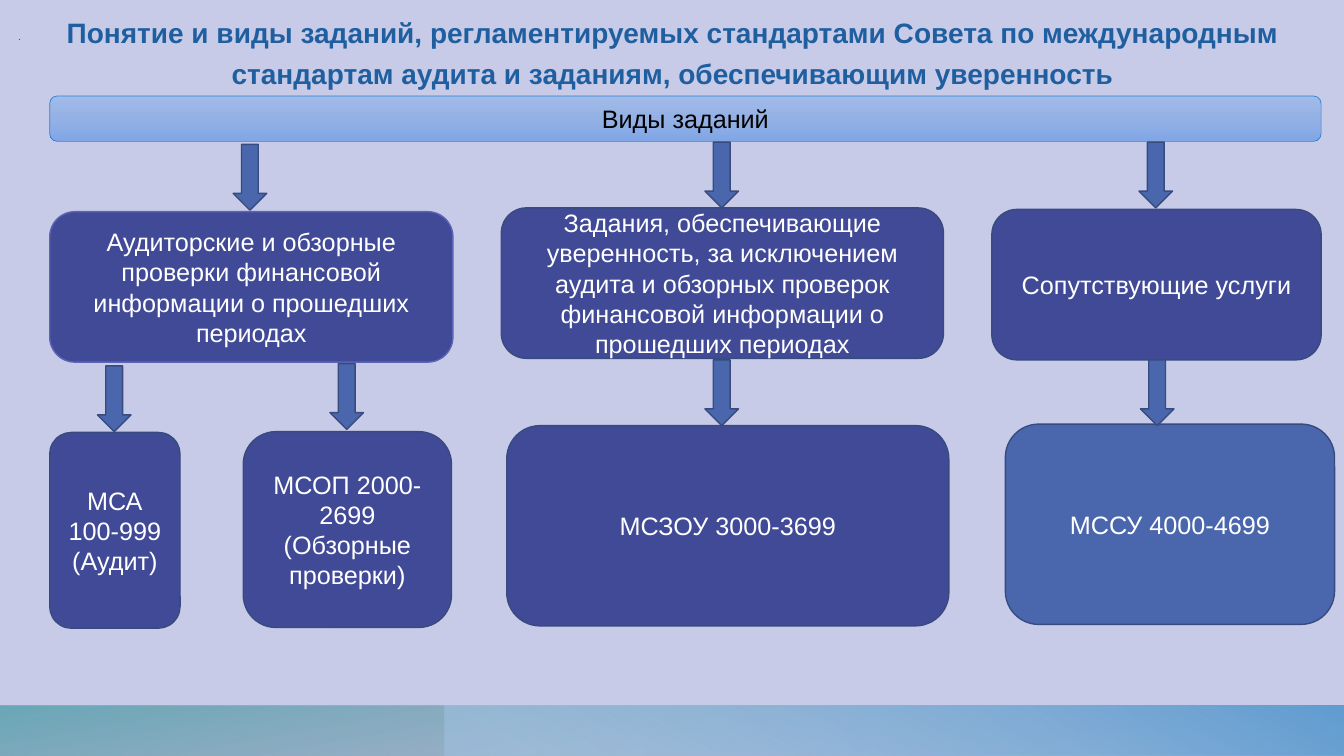
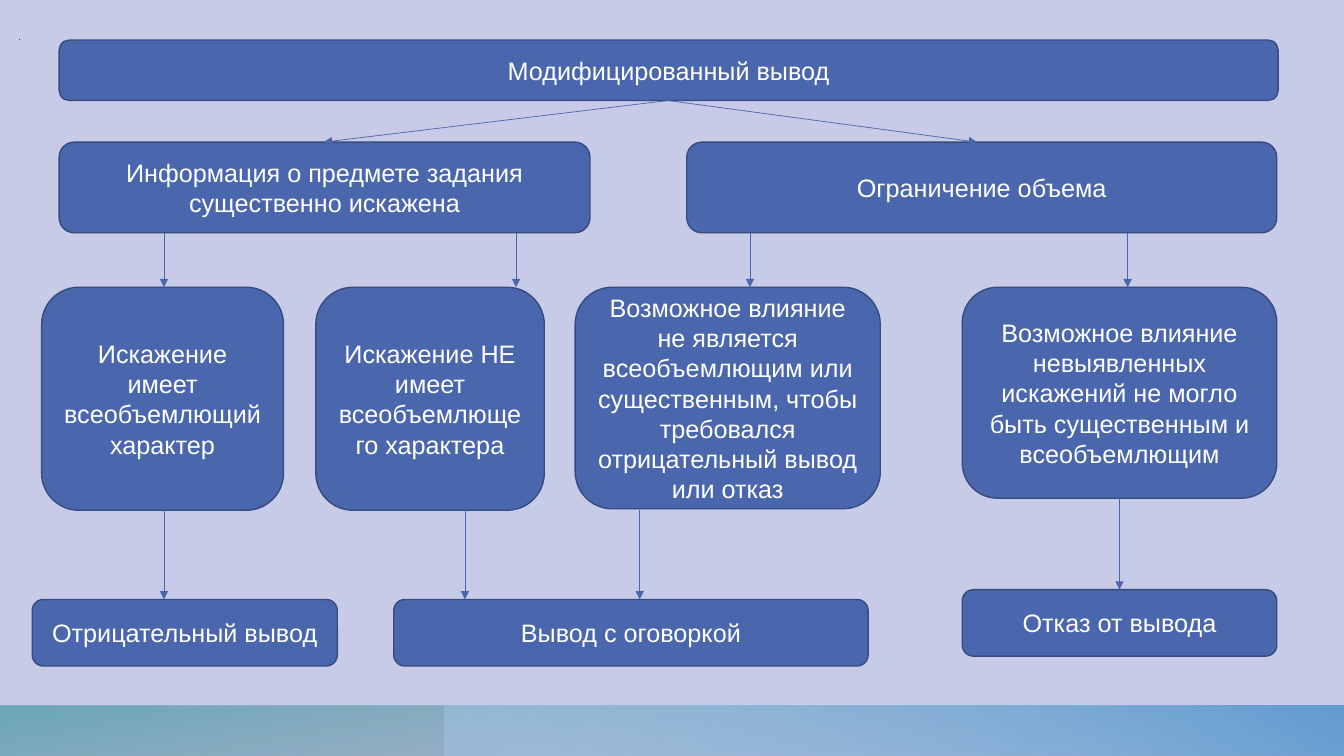
from lxml.etree import SubElement
from pptx import Presentation
from pptx.dml.color import RGBColor
from pptx.enum.shapes import MSO_CONNECTOR as Connector, MSO_SHAPE as Preset
from pptx.enum.text import MSO_ANCHOR as Anchor, PP_ALIGN as Align
from pptx.oxml.ns import qn
from pptx.util import Inches, Pt

WIDTH, HEIGHT = Inches(13.33), Inches(7.5)

COLORS = {
    "page": "C8CBE7",
    "title": "1F5FA0",
    "ink": "000000",
    "light": "FFFFFF",
    "indigo": "414A96",
    "indigo_edge": "5C64B7",
    "blue": "4A66AC",
    "blue_edge": "374B7F",
    "header_edge": "297FD5",
    "header_top": "A2BCE9",
    "header_middle": "94B1E5",
    "header_bottom": "80A6E6",
    "band_grey": "7F8FA9",
    "band_teal": "5AA2AE",
    "band_pale": "A1C4E3",
    "band_blue": "629DD1",
}

BOX_FRAME = {"word_wrap": True, "vertical_anchor": Anchor.MIDDLE}
BARE_FRAME = {
    "word_wrap": True,
    "margin_left": 0,
    "margin_top": 0,
    "margin_right": 0,
    "margin_bottom": 0,
}
MARK_FRAME = {**BARE_FRAME, "vertical_anchor": Anchor.BOTTOM}
CENTERED = {"alignment": Align.CENTER}
TITLE_PARA = {**CENTERED, "line_spacing": 1.2, "space_before": Pt(10)}
BODY_FONT = {"name": "Arial", "size": Pt(18)}
TITLE_FONT = {"name": "Arial", "size": Pt(20), "bold": True}
MARK_FONT = {"name": "Arial", "size": Pt(4), "bold": True}

ARROW_WIDTH, ARROW_HEIGHT = 2.5, 8.7


def across(share):
    return round(WIDTH * share / 100)


def down(share):
    return round(HEIGHT * share / 100)


def area(left, top, width, height):
    return across(left), down(top), across(width), down(height)


def rgb(name):
    return RGBColor.from_string(COLORS[name])


def assign(target, values):
    for name, value in values.items():
        setattr(target, name, value)


def write(shape, text, frame_format, para_format, font_format, color):
    frame = shape.text_frame
    assign(frame, frame_format)
    para = frame.paragraphs[0]
    assign(para, para_format)
    span = para.add_run()
    span.text = text
    assign(span.font, font_format)
    span.font.color.rgb = rgb(color)


def paint_gradient(shape, angle, stops):
    shape.fill.gradient()
    gradient = shape.element.xpath("./p:spPr/a:gradFill")[0]
    gradient.clear()
    gradient.set("rotWithShape", "1")
    stop_list = SubElement(gradient, qn("a:gsLst"))
    for position, color, opacity in stops:
        stop = SubElement(stop_list, qn("a:gs"), pos=str(position * 1000))
        tint = SubElement(stop, qn("a:srgbClr"), val=COLORS[color])
        if opacity < 100:
            SubElement(tint, qn("a:alpha"), val=str(opacity * 1000))
    SubElement(gradient, qn("a:lin"), ang=str(angle * 60000), scaled="0")


def add_preset(page, preset, place, fill="blue", edge="blue_edge", weight=1):
    shape = page.shapes.add_shape(preset, *area(*place))
    shape.shadow.inherit = False
    if fill:
        shape.fill.solid()
        shape.fill.fore_color.rgb = rgb(fill)
    if edge:
        shape.line.color.rgb = rgb(edge)
        shape.line.width = Pt(weight)
    else:
        shape.line.fill.background()
    return shape


def add_box(page, text, place, fill="blue", edge="blue_edge", weight=1, color="light"):
    box = add_preset(page, Preset.ROUNDED_RECTANGLE, place, fill, edge, weight)
    write(box, text, BOX_FRAME, CENTERED, BODY_FONT, color)
    return box


def add_block_arrow(page, center, top):
    place = (center - ARROW_WIDTH / 2, top, ARROW_WIDTH, ARROW_HEIGHT)
    add_preset(page, Preset.DOWN_ARROW, place)


def add_thin_arrow(page, start, end):
    (x1, y1), (x2, y2) = start, end
    arrow = page.shapes.add_connector(
        Connector.STRAIGHT, across(x1), down(y1), across(x2), down(y2)
    )
    arrow.line.color.rgb = rgb("blue")
    arrow.line.width = Pt(0.5)
    SubElement(arrow.line._get_or_add_ln(), qn("a:tailEnd"), type="triangle")
    SubElement(arrow.element.spPr, qn("a:effectLst"))


def add_text(page, text, place, frame_format, para_format, font_format, color):
    box = page.shapes.add_textbox(*area(*place))
    write(box, text, frame_format, para_format, font_format, color)


def add_page(deck):
    page = deck.slides.add_slide(deck.slide_layouts[6])
    add_text(page, ".", (1.4, 1.2, 97.9, 4.3), MARK_FRAME, {}, MARK_FONT, "ink")
    return page


def add_master_bands(deck, page):
    bands = [
        (0, 100, 180, 100, [(14, "band_grey", 28), (100, "band_teal", 85)]),
        (33.1, 66.9, 0, 240, [(9, "band_pale", 55), (99, "band_blue", 100)]),
    ]
    master = deck.slide_master
    master.background.fill.solid()
    master.background.fill.fore_color.rgb = rgb("page")
    for number, (left, width, rotation, angle, stops) in enumerate(bands, 101):
        place = (left, 93.3, width, 6.7)
        band = add_preset(page, Preset.RECTANGLE, place, fill=None, edge=None)
        paint_gradient(band, angle, stops)
        band.rotation = rotation
        band.element.xpath("./p:spPr/a:xfrm")[0].set("flipH", "1")
        band.element.xpath("./p:nvSpPr/p:cNvPr")[0].set("id", str(number))
        master.shapes.element.append(band.element)


def fill_engagement_types(page):
    add_text(
        page,
        "Понятие и виды заданий, регламентируемых стандартами Совета по "
        "международным стандартам аудита и заданиям, обеспечивающим уверенность",
        (0.8, 1.2, 98.5, 11.5), BARE_FRAME, TITLE_PARA, TITLE_FONT, "title",
    )
    header = add_box(
        page, "Виды заданий", (3.7, 12.7, 94.6, 6), None, "header_edge", 0.5, "ink"
    )
    paint_gradient(header, 90, [
        (0, "header_top", 100),
        (50, "header_middle", 100),
        (100, "header_bottom", 100),
    ])
    boxes = [
        ("Аудиторские и обзорные проверки финансовой информации о прошедших периодах",
         (3.7, 28, 30, 19.9), "indigo", "indigo_edge"),
        ("Задания, обеспечивающие уверенность, за исключением аудита и обзорных "
         "проверок финансовой информации о прошедших периодах",
         (37.3, 27.5, 32.9, 19.9), "indigo", "blue_edge"),
        ("Сопутствующие услуги", (73.8, 27.7, 24.5, 19.9), "indigo", "blue_edge"),
        ("МСА 100-999 (Аудит)", (3.7, 57.2, 9.7, 25.9), "indigo", "blue_edge"),
        ("МСОП 2000-2699 (Обзорные проверки)",
         (18.1, 57.1, 15.5, 25.9), "indigo", "blue_edge"),
        ("МСЗОУ 3000-3699", (37.7, 56.3, 32.9, 26.5), "indigo", "blue_edge"),
        ("МССУ 4000-4699", (74.8, 56.1, 24.5, 26.5), "blue", "blue_edge"),
    ]
    for box in boxes:
        add_box(page, *box)
    arrows = [
        (18.6, 19.1), (53.7, 18.8), (86, 18.8),
        (8.5, 48.4), (25.8, 48.1), (53.7, 47.6), (86.1, 47.6),
    ]
    for center, top in arrows:
        add_block_arrow(page, center, top)


def fill_modified_conclusion(page):
    boxes = [
        ("Модифицированный вывод", (4.4, 5.3, 90.7, 8)),
        ("Информация о предмете задания существенно искажена", (4.4, 18.8, 39.5, 12)),
        ("Ограничение объема", (51.1, 18.8, 43.9, 12)),
        ("Искажение имеет всеобъемлющий характер", (3.1, 38, 18, 29.5)),
        ("Искажение НЕ имеет всеобъемлющего характера", (23.5, 38, 17, 29.5)),
        ("Возможное влияние не является всеобъемлющим или существенным, чтобы "
         "требовался отрицательный вывод или отказ", (42.8, 38, 22.7, 29.3)),
        ("Возможное влияние невыявленных искажений не могло быть существенным и "
         "всеобъемлющим", (71.6, 38, 23.4, 27.9)),
        ("Отрицательный вывод", (2.4, 79.3, 22.7, 8.8)),
        ("Вывод с оговоркой", (29.3, 79.3, 35.3, 8.8)),
        ("Отказ от вывода", (71.6, 78, 23.4, 8.8)),
    ]
    for text, place in boxes:
        add_box(page, text, place)
    for x in (24.1, 72.7):
        add_thin_arrow(page, (49.7, 13.3), (x, 18.8))
    drops = [(x, 30.8, 38) for x in (12.2, 38.4, 55.8, 83.9)]
    drops += [(x, 67.4, 79.3) for x in (12.2, 34.6, 47.6)]
    drops += [(83.3, 65.9, 78)]
    for x, top, bottom in drops:
        add_thin_arrow(page, (x, top), (x, bottom))


def main():
    deck = Presentation()
    assign(deck, {"slide_width": WIDTH, "slide_height": HEIGHT})
    first = add_page(deck)
    add_master_bands(deck, first)
    fill_engagement_types(first)
    fill_modified_conclusion(add_page(deck))
    deck.save("out.pptx")


if __name__ == "__main__":
    main()
